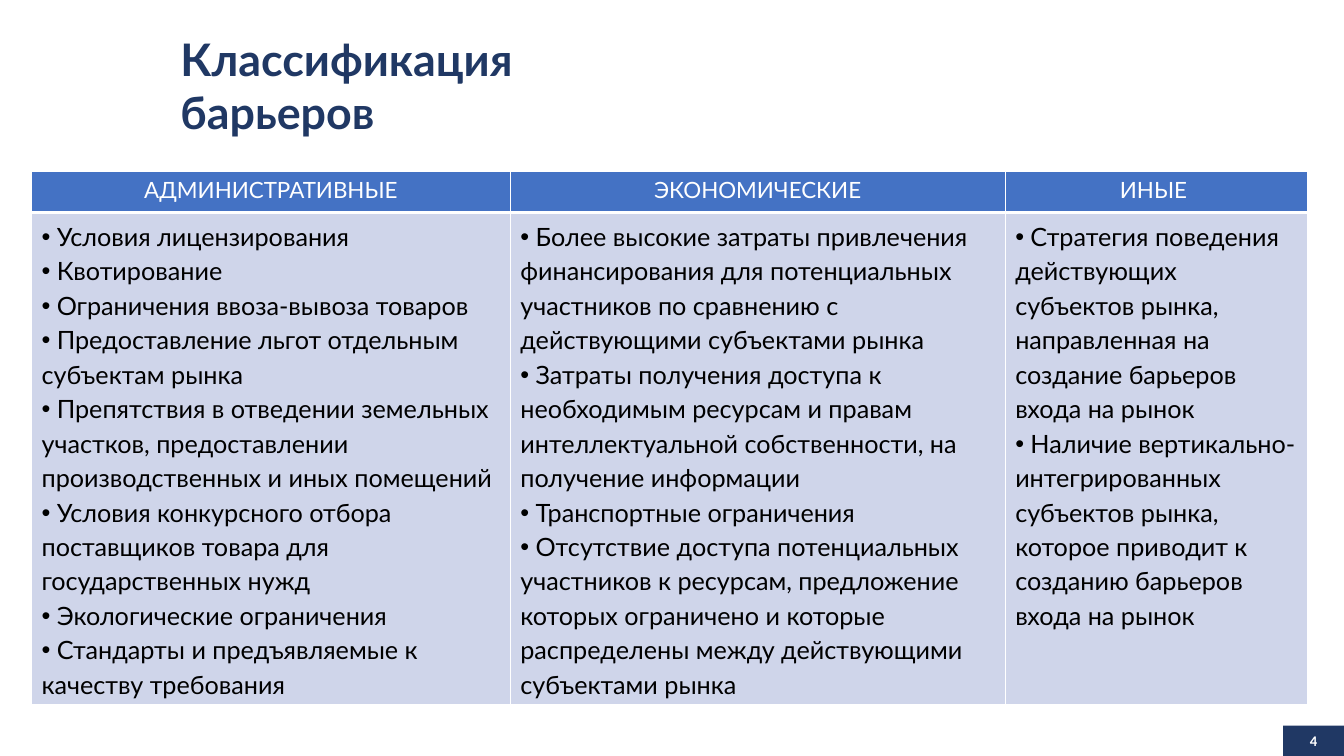
import pptx
import pptx.util
import pptx.dml.color
import pptx.enum.shapes
import pptx.enum.text
import pptx.oxml.ns
import lxml.etree

Pt = pptx.util.Pt
RGBColor = pptx.dml.color.RGBColor
PP_ALIGN = pptx.enum.text.PP_ALIGN
MIDDLE = pptx.enum.text.MSO_ANCHOR.MIDDLE
qn = pptx.oxml.ns.qn

NAVY = RGBColor(0x20, 0x38, 0x64)
BLUE = RGBColor(0x44, 0x72, 0xC4)
PALE_BLUE = RGBColor(0xCF, 0xD5, 0xEA)
WHITE = RGBColor(0xFF, 0xFF, 0xFF)
BLACK = RGBColor(0x00, 0x00, 0x00)

BARRIERS = [
    ("АДМИНИСТРАТИВНЫЕ", 342, [
        "Условия лицензирования",
        "Квотирование",
        "Ограничения ввоза-вывоза товаров",
        "Предоставление льгот отдельным субъектам рынка",
        "Препятствия в отведении земельных участков, предоставлении "
        "производственных и иных помещений",
        "Условия конкурсного отбора поставщиков товара для государственных нужд",
        "Экологические ограничения",
        "Стандарты и предъявляемые к качеству требования",
    ]),
    ("ЭКОНОМИЧЕСКИЕ", 353.5, [
        "Более высокие затраты привлечения финансирования для потенциальных "
        "участников по сравнению с действующими субъектами рынка",
        "Затраты получения доступа к необходимым ресурсам и правам "
        "интеллектуальной собственности, на получение информации",
        "Транспортные ограничения",
        "Отсутствие доступа потенциальных участников к ресурсам, предложение "
        "которых ограничено и которые распределены между действующими "
        "субъектами рынка",
    ]),
    ("ИНЫЕ ", 216, [
        "Стратегия поведения действующих субъектов рынка, направленная на "
        "создание барьеров входа на рынок",
        "Наличие вертикально-интегрированных субъектов рынка, которое приводит "
        "к созданию барьеров входа на рынок",
    ]),
]


def add_span(para, text, size, color, font="Lato", bold=False):
    span = para.add_run()
    span.text = text
    span.font.size = Pt(size)
    span.font.name = font
    span.font.bold = bold
    span.font.color.rgb = color


def style_cell(cell, fill, bottom_width):
    """Give the cell white borders and a solid fill."""
    properties = cell._tc.get_or_add_tcPr()
    for side, width in (("L", 1), ("R", 1), ("T", 1), ("B", bottom_width)):
        line = lxml.etree.SubElement(properties, qn("a:ln" + side), w=str(Pt(width)))
        solid = lxml.etree.SubElement(line, qn("a:solidFill"))
        lxml.etree.SubElement(solid, qn("a:srgbClr"), val=str(WHITE))
    cell.fill.solid()
    cell.fill.fore_color.rgb = fill


deck = pptx.Presentation()
deck.slide_width = Pt(960)
deck.slide_height = Pt(540)
page = deck.slides.add_slide(deck.slide_layouts[5])

# Title
title = page.shapes.title
title.left, title.top, title.width, title.height = Pt(121.7), Pt(18), Pt(300), Pt(85.7)
title.text_frame.word_wrap = True
title.text_frame.auto_size = pptx.enum.text.MSO_AUTO_SIZE.NONE
title.text_frame.vertical_anchor = MIDDLE
title_para = title.text_frame.paragraphs[0]
title_para.alignment = PP_ALIGN.LEFT
add_span(title_para, "Классификация барьеров", 32, NAVY, bold=True)

# Table of barriers
table = page.shapes.add_table(
    2, len(BARRIERS), Pt(22.5), Pt(122.5), Pt(911.5), Pt(379)).table
table.rows[0].height = Pt(29.2)
table.rows[1].height = Pt(349.8)

for index, (heading, width, items) in enumerate(BARRIERS):
    table.columns[index].width = Pt(width)

    head_cell = table.cell(0, index)
    style_cell(head_cell, BLUE, 3)
    head_para = head_cell.text_frame.paragraphs[0]
    head_para.alignment = PP_ALIGN.CENTER
    add_span(head_para, heading, 16, WHITE)

    list_cell = table.cell(1, index)
    style_cell(list_cell, PALE_BLUE, 1)
    for number, item in enumerate(items):
        frame = list_cell.text_frame
        para = frame.add_paragraph() if number else frame.paragraphs[0]
        para.line_spacing = 1.14
        bullet_properties = para._p.get_or_add_pPr()
        lxml.etree.SubElement(bullet_properties, qn("a:buFont"), typeface="Arial")
        lxml.etree.SubElement(bullet_properties, qn("a:buChar"), char="•")
        add_span(para, " " + item, 18, BLACK)

# Page number
number_box = page.shapes.add_shape(
    pptx.enum.shapes.MSO_SHAPE.RECTANGLE, Pt(916.5), Pt(518.4), Pt(43.5), Pt(21.6))
number_box.shadow.inherit = False
number_box.fill.solid()
number_box.fill.fore_color.rgb = NAVY
number_box.line.fill.background()
number_box.text_frame.vertical_anchor = MIDDLE
number_para = number_box.text_frame.paragraphs[0]
number_para.alignment = PP_ALIGN.CENTER
add_span(number_para, "4", 10.5, WHITE, font="Calibri", bold=True)

deck.save("out.pptx")
